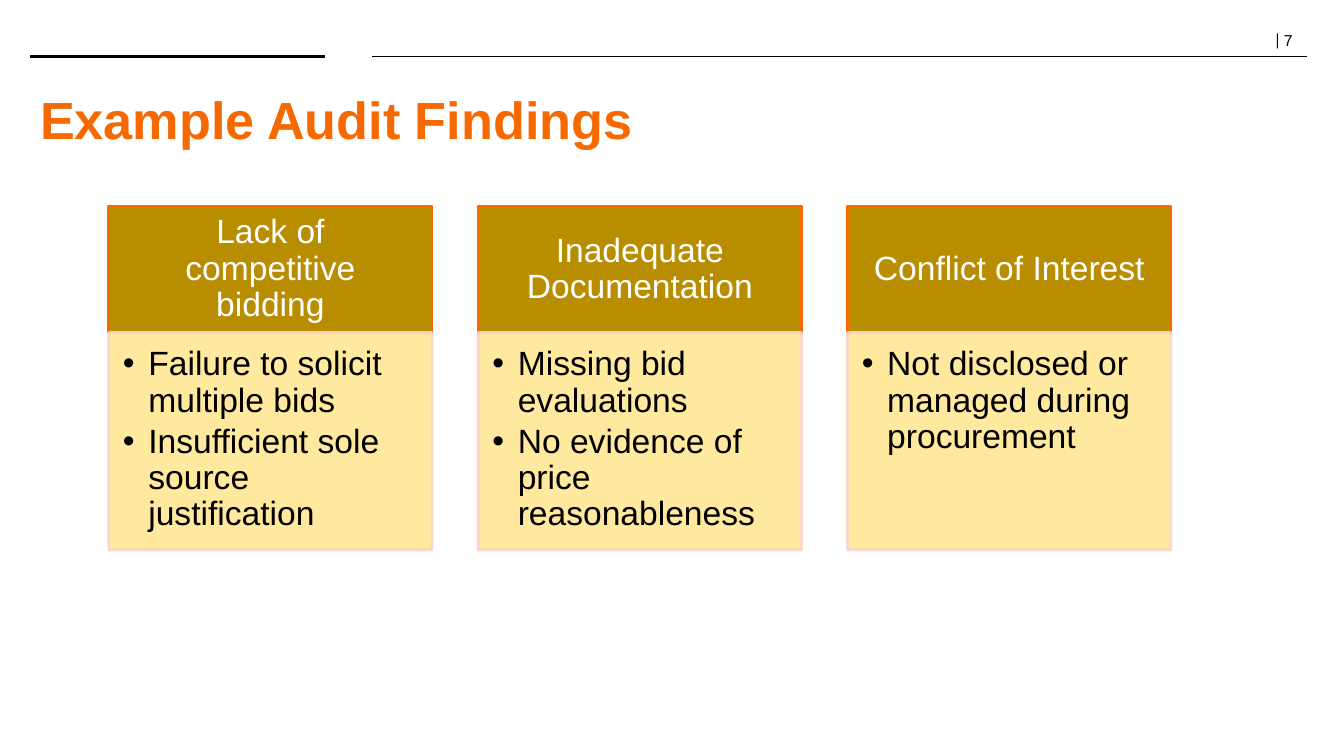
"""Builds the audit findings slide: three headed cards under a ruled title."""
from lxml import etree
from pptx import Presentation
from pptx.dml.color import RGBColor
from pptx.enum.shapes import MSO_CONNECTOR, MSO_SHAPE
from pptx.enum.text import MSO_ANCHOR, PP_ALIGN
from pptx.oxml.ns import qn
from pptx.util import Cm, Pt

STRAIGHT = MSO_CONNECTOR.STRAIGHT
RECTANGLE = MSO_SHAPE.RECTANGLE
TOP, MIDDLE = MSO_ANCHOR.TOP, MSO_ANCHOR.MIDDLE
LEFT, CENTER = PP_ALIGN.LEFT, PP_ALIGN.CENTER

TITLE = "Example Audit Findings"
PAGE_MARK = [("| ", "Cambria", 12), ("7", "Arial", 11.3)]
FINDINGS = [
    ("Lack of competitive bidding",
     ["Failure to solicit multiple bids", "Insufficient sole source justification"]),
    ("Inadequate Documentation",
     ["Missing bid evaluations", "No evidence of price reasonableness"]),
    ("Conflict of Interest",
     ["Not disclosed or managed during procurement"]),
]
RULES = [(0.76, 8.18, 2), (9.37, 32.94, 1)]
RULE_TOP = 1.42

THEME = {
    "font": "Arial", "title_size": 37.3, "card_size": 24,
    "accent": "F66900", "ink": "000000", "white": "FFFFFF",
    "header": "B88E00", "body": "FFE795", "body_line": "FBD4CC",
    "card_line": 2, "body_alpha": 90,
}

CARD_LEFT, CARD_TOP, CARD_WIDTH, CARD_PITCH = 2.74, 5.19, 8.15, 9.31
HEADER_HEIGHT, BODY_HEIGHT = 3.19, 5.48
HEADER_INSETS = (0.48, 0.28, 0.48, 0.28)
BODY_INSETS = (0.36, 0.36, 0.48, 0.53)
BULLET_INDENT = 0.64


def color(name):
    return RGBColor.from_string(THEME[name])


def style(font, size, color_name, name=THEME["font"], bold=False):
    font.name, font.size, font.bold = name, Pt(size), bold
    font.color.rgb = color(color_name)


def set_frame(frame, anchor, insets):
    frame.word_wrap = True
    frame.vertical_anchor = anchor
    (frame.margin_left, frame.margin_top,
     frame.margin_right, frame.margin_bottom) = map(Cm, insets)


def add_text_box(page, area, anchor, insets):
    box = page.shapes.add_textbox(*map(Cm, area))
    set_frame(box.text_frame, anchor, insets)
    return box.text_frame.paragraphs[0]


def add_rule(page, start, end, weight):
    rule = page.shapes.add_connector(
        STRAIGHT, Cm(start), Cm(RULE_TOP), Cm(end), Cm(RULE_TOP))
    rule.line.color.rgb = color("ink")
    rule.line.width = Pt(weight)
    etree.SubElement(rule.element.spPr, qn("a:effectLst"))


def add_bullet(para):
    properties = para._p.get_or_add_pPr()
    properties.set("marL", str(Cm(BULLET_INDENT)))
    properties.set("indent", str(-Cm(BULLET_INDENT)))
    etree.SubElement(properties, qn("a:buFont"), typeface=THEME["font"])
    etree.SubElement(properties, qn("a:buChar"), char="•")


def set_alpha(fill_parent):
    for tint in fill_parent.iter(qn("a:srgbClr")):
        etree.SubElement(tint, qn("a:alpha"), val=str(THEME["body_alpha"] * 1000))


def add_panel(page, area, fill, line, lines, anchor, insets, align, ink):
    panel = page.shapes.add_shape(RECTANGLE, *map(Cm, area))
    panel.shadow.inherit = False
    panel.fill.solid()
    panel.fill.fore_color.rgb = color(fill)
    panel.line.color.rgb = color(line)
    panel.line.width = Pt(THEME["card_line"])
    frame = panel.text_frame
    set_frame(frame, anchor, insets)
    for index, words in enumerate(lines):
        para = frame.add_paragraph() if index else frame.paragraphs[0]
        para.text = words
        para.alignment = align
        para.line_spacing = 0.9
        style(para.font, THEME["card_size"], ink)
    return panel


def add_card(page, left, heading, points):
    add_panel(page, (left, CARD_TOP, CARD_WIDTH, HEADER_HEIGHT), "header", "accent",
              [heading], MIDDLE, HEADER_INSETS, CENTER, "white")
    body = add_panel(page, (left, CARD_TOP + HEADER_HEIGHT, CARD_WIDTH, BODY_HEIGHT),
                     "body", "body_line", points, TOP, BODY_INSETS, LEFT, "ink")
    set_alpha(body.element.spPr)
    for para in body.text_frame.paragraphs:
        para.space_after = Pt(3.6)
        properties = para._p.get_or_add_pPr()
        run_defaults = properties.find(qn("a:defRPr"))
        properties.remove(run_defaults)
        add_bullet(para)
        properties.append(run_defaults)


def main():
    deck = Presentation()
    deck.slide_width, deck.slide_height = Cm(33.87), Cm(19.05)
    page = deck.slides.add_slide(deck.slide_layouts[6])

    para = add_text_box(page, (31.88, 0.71, 1.9, 0.66), MIDDLE, (0.25, 0.13, 0, 0.13))
    para.line_spacing = 0.8
    for words, font_name, size in PAGE_MARK:
        span = para.add_run()
        span.text = words
        style(span.font, size, "ink", font_name)

    for start, end, weight in RULES:
        add_rule(page, start, end, weight)

    para = add_text_box(page, (0.76, 2.03, 28.78, 1.93), MIDDLE, (0.25, 0.13, 0.25, 0.13))
    para.text = TITLE
    style(para.font, THEME["title_size"], "accent", bold=True)

    for index, (heading, points) in enumerate(FINDINGS):
        add_card(page, CARD_LEFT + index * CARD_PITCH, heading, points)

    deck.save("out.pptx")


if __name__ == "__main__":
    main()
